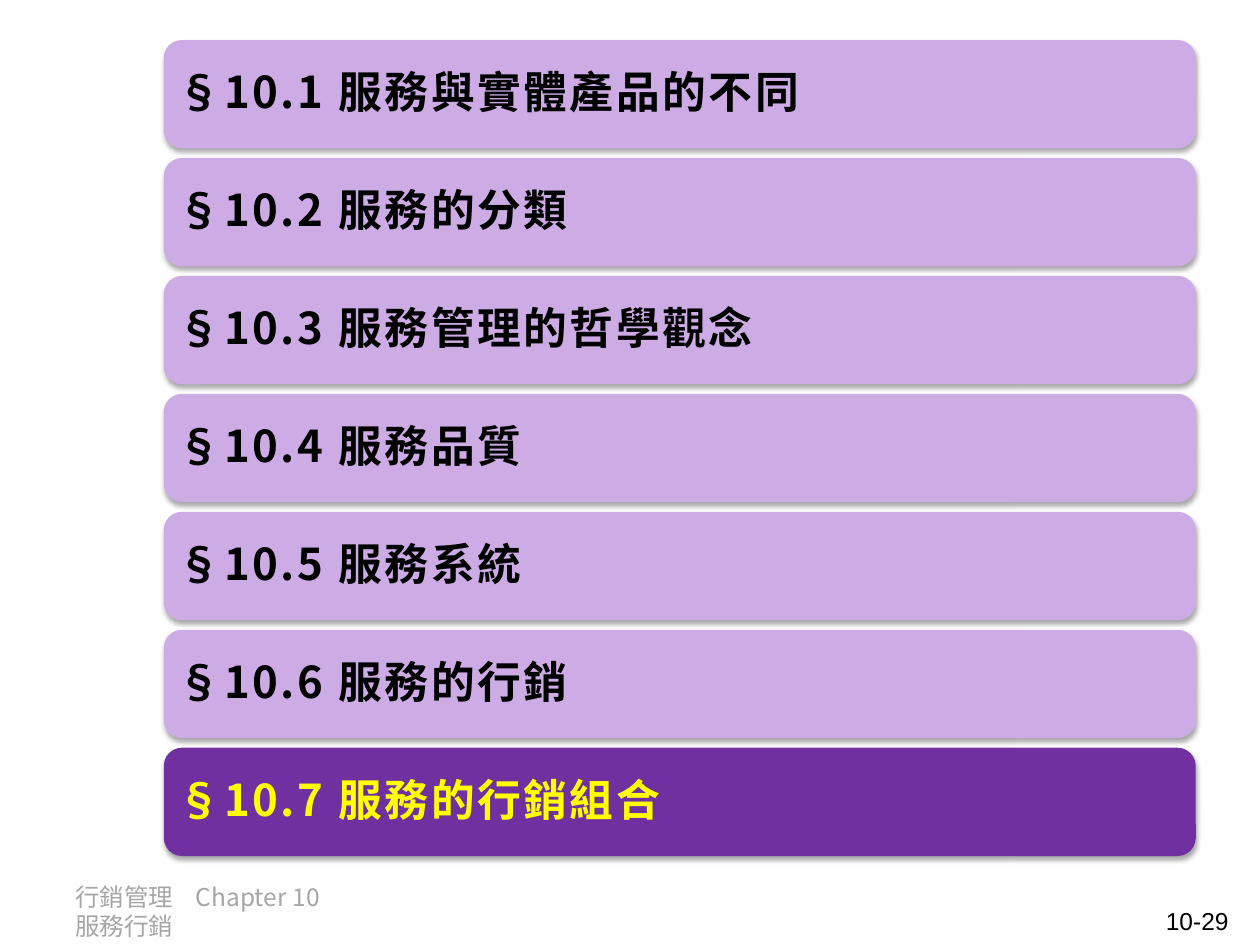
import pptx
import pptx.dml.color
import pptx.enum.shapes
import pptx.enum.text
import pptx.oxml
import pptx.oxml.ns
import pptx.util

Pt = pptx.util.Pt
RGBColor = pptx.dml.color.RGBColor
PP_ALIGN = pptx.enum.text.PP_ALIGN

LILAC = RGBColor(0xCD, 0xAC, 0xE6)
PURPLE = RGBColor(0x70, 0x30, 0xA0)
YELLOW = RGBColor(0xFF, 0xFF, 0x00)
BLACK = RGBColor(0x00, 0x00, 0x00)
GREY = RGBColor(0xA6, 0xA6, 0xA6)

CJK = "Noto Sans CJK SC"
LATIN = "Arial"
NS = pptx.oxml.ns.nsdecls("a")

SECTIONS = ["服務與實體產品的不同", "服務的分類", "服務管理的哲學觀念", "服務品質",
            "服務系統", "服務的行銷", "服務的行銷組合"]
CURRENT = 7
BAR_LEFT, BAR_TOP, BAR_WIDTH, BAR_HEIGHT, BAR_PITCH = 93.6, 22.9, 589.7, 61.9, 67.4


def set_attributes(target, values):
    for name, value in values.items():
        setattr(target, name, value)


def add_run(p, text, font, size, color, bold=False, spacing=None):
    r = p.add_run()
    r.text = text
    set_attributes(r.font, {"name": font, "size": Pt(size), "bold": bold})
    r.font.color.rgb = color
    r_pr = r.font._element
    if spacing:
        r_pr.set("spc", str(round(spacing * 100)))
    r_pr.find(pptx.oxml.ns.qn("a:latin")).addnext(
        pptx.oxml.parse_xml(f'<a:ea {NS} typeface="{CJK}"/>'))


def add_soft_shadow(s):
    s._element.spPr.append(pptx.oxml.parse_xml(
        f'<a:effectLst {NS}><a:outerShdw blurRad="{Pt(3.1)}" dist="{Pt(1.8)}" '
        'dir="5400000" rotWithShape="0"><a:srgbClr val="000000">'
        '<a:alpha val="35000"/></a:srgbClr></a:outerShdw></a:effectLst>'))


def add_section_bar(slide, number, title):
    top = BAR_TOP + (number - 1) * BAR_PITCH
    s = slide.shapes.add_shape(
        pptx.enum.shapes.MSO_SHAPE.ROUNDED_RECTANGLE,
        Pt(BAR_LEFT), Pt(top), Pt(BAR_WIDTH), Pt(BAR_HEIGHT))
    current = number == CURRENT
    s.fill.solid()
    s.fill.fore_color.rgb = PURPLE if current else LILAC
    s.line.fill.background()
    add_soft_shadow(s)

    tf = s.text_frame
    set_attributes(tf, {
        "word_wrap": True, "vertical_anchor": pptx.enum.text.MSO_ANCHOR.MIDDLE,
        "margin_left": Pt(5), "margin_right": Pt(5),
        "margin_top": Pt(5), "margin_bottom": Pt(5)})
    p = tf.paragraphs[0]
    set_attributes(p, {"alignment": PP_ALIGN.LEFT, "line_spacing": 0.9,
                       "space_after": Pt(9)})
    color = YELLOW if current else BLACK
    for text, font in ((f"§10.{number} ", CJK), (title, LATIN)):
        add_run(p, text, font, 25, color, bold=True, spacing=1.5)


def add_text_box(slide, left, top, width, height, align):
    """Add an empty wrapping text box and return its paragraph."""
    box = slide.shapes.add_textbox(Pt(left), Pt(top), Pt(width), Pt(height))
    box.text_frame.word_wrap = True
    p = box.text_frame.paragraphs[0]
    p.alignment = align
    return p


def add_footer(slide):
    p = add_text_box(slide, 36, 500.4, 176.4, 28.8, PP_ALIGN.LEFT)
    p._p.get_or_add_pPr().append(pptx.oxml.parse_xml(
        f'<a:tabLst {NS}><a:tab pos="{Pt(68.8)}" algn="l"/></a:tabLst>'))
    add_run(p, "行銷管理\tChapter 10", CJK, 14, GREY)
    p.add_line_break()
    add_run(p, "服務行銷", CJK, 14, GREY)


def add_page_number(slide):
    p = add_text_box(slide, 541.4, 514.1, 167.8, 20.9, PP_ALIGN.RIGHT)
    add_run(p, "10-29", LATIN, 14, BLACK)


def main():
    prs = pptx.Presentation()
    set_attributes(prs, {"slide_width": Pt(720), "slide_height": Pt(540)})
    slide = prs.slides.add_slide(prs.slide_layouts[6])
    add_footer(slide)
    add_page_number(slide)
    for number, title in enumerate(SECTIONS, start=1):
        add_section_bar(slide, number, title)
    prs.save("out.pptx")


if __name__ == "__main__":
    main()
